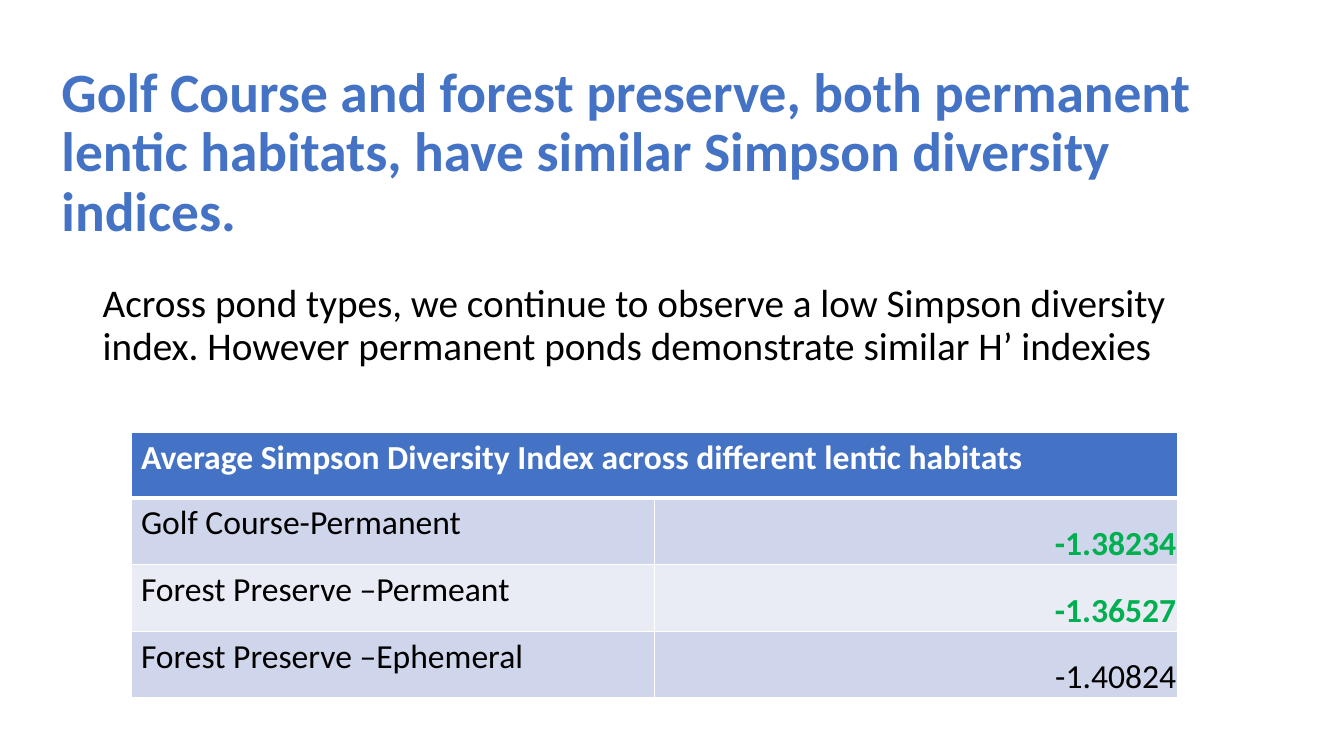
from dataclasses import dataclass

from lxml.etree import SubElement
from pptx import Presentation
from pptx.dml.color import RGBColor
from pptx.enum.text import MSO_ANCHOR, PP_ALIGN
from pptx.oxml.ns import qn
from pptx.util import Cm, Pt


@dataclass(frozen=True)
class Theme:
    font: str = "Calibri"
    accent: str = "4472C4"
    text: str = "000000"
    light: str = "FFFFFF"
    highlight: str = "00B050"
    bands: tuple = ("CFD5EA", "E9EBF5")
    title_size: float = 39.6
    body_size: float = 28
    table_size: float = 24


class Deck:
    def __init__(self, prs, theme):
        self.theme = theme
        self.s = prs.slides.add_slide(prs.slide_layouts[6])

    def paragraph(self, tf, text, size, color, bold=False):
        p = tf.paragraphs[0]
        p.text = text
        p.font.name = self.theme.font
        p.font.size = Pt(size)
        p.font.bold = bold
        p.font.color.rgb = RGBColor.from_string(color)
        return p

    def text(self, box, text, size, color, bold=False, anchor=MSO_ANCHOR.TOP, top=0.13, bottom=0.13):
        tf = self.s.shapes.add_textbox(*map(Cm, box)).text_frame
        tf.word_wrap = True
        tf.vertical_anchor = anchor
        tf.margin_top, tf.margin_bottom = Cm(top), Cm(bottom)
        self.paragraph(tf, text, size, color, bold).line_spacing = 0.9

    def cell(self, cell, text, fill, color, bold=False, bottom_width=1):
        cell.fill.solid()
        cell.fill.fore_color.rgb = RGBColor.from_string(fill)
        tc_pr = cell._tc.get_or_add_tcPr()
        widths = {"a:lnL": 1, "a:lnR": 1, "a:lnT": 1, "a:lnB": bottom_width}
        for i, (side, width) in enumerate(widths.items()):
            ln = SubElement(tc_pr, qn(side), w=str(Pt(width)))
            line_fill = SubElement(ln, qn("a:solidFill"))
            SubElement(line_fill, qn("a:srgbClr"), val=self.theme.light)
            tc_pr.insert(i, ln)
        return self.paragraph(cell.text_frame, text, self.theme.table_size, color, bold)

    def table(self, box, header, rows, header_height, row_height):
        t = self.theme
        table = self.s.shapes.add_table(len(rows) + 1, 2, *map(Cm, box)).table
        for i, row in enumerate(table.rows):
            row.height = Cm(row_height if i else header_height)
        table.cell(0, 0).merge(table.cell(0, 1))
        for col, text in enumerate((header, "")):
            self.cell(table.cell(0, col), text, t.accent, t.light, True, 3)
        for i, (habitat, index, similar) in enumerate(rows):
            fill = t.bands[i % 2]
            self.cell(table.cell(i + 1, 0), habitat, fill, t.text)
            value = table.cell(i + 1, 1)
            color = t.highlight if similar else t.text
            self.cell(value, index, fill, color, similar).alignment = PP_ALIGN.RIGHT
            value.vertical_anchor = MSO_ANCHOR.BOTTOM
            value.margin_left = value.margin_right = value.margin_top = Cm(0.03)
            value.margin_bottom = Cm(0)


def main():
    prs = Presentation()
    prs.slide_width, prs.slide_height = Cm(33.87), Cm(19.05)
    theme = Theme()
    deck = Deck(prs, theme)
    deck.text(
        (1.3, 2.97, 29.21, 3.33),
        "Golf Course and forest preserve, both permanent lentic habitats, "
        "have similar Simpson diversity indices.",
        theme.title_size, theme.accent, True, MSO_ANCHOR.MIDDLE, bottom=1.64,
    )
    deck.text(
        (2.34, 4.65, 29.21, 12.52),
        "Across pond types, we continue to observe a low Simpson diversity index. "
        "However permanent ponds demonstrate similar H’ indexies",
        theme.body_size, theme.text, top=3,
    )
    deck.table(
        (3.3, 10.9, 26.37, 6.69),
        "Average Simpson Diversity Index across different lentic habitats",
        (
            ("Golf Course-Permanent", "-1.38234", True),
            ("Forest Preserve –Permeant", "-1.36527", True),
            ("Forest Preserve –Ephemeral", "-1.40824", False),
        ),
        1.65, 1.68,
    )
    prs.save("out.pptx")


if __name__ == "__main__":
    main()
